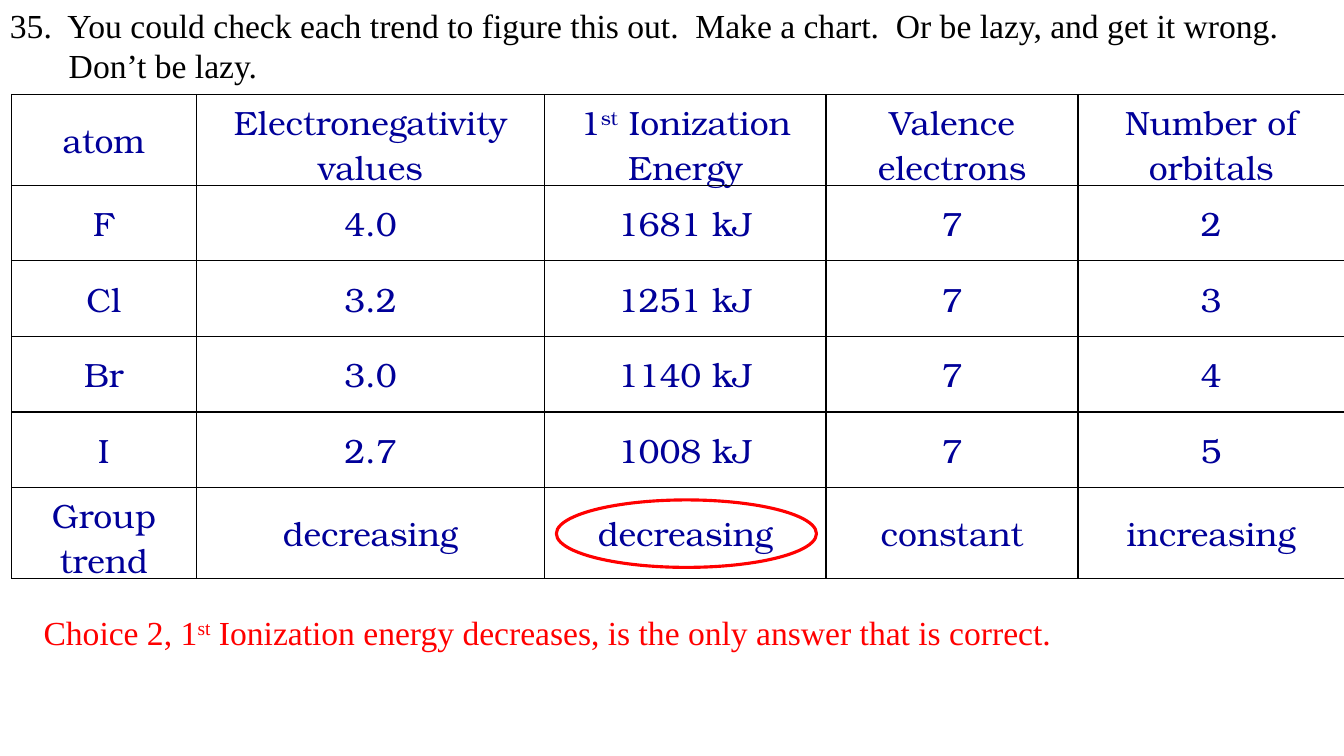
from pptx import Presentation
from pptx.dml.color import RGBColor
from pptx.enum.shapes import MSO_SHAPE
from pptx.enum.text import MSO_ANCHOR, PP_ALIGN
from pptx.util import Pt
from lxml.etree import SubElement
from pptx.oxml.ns import qn

COLOURS = {"black": "000000", "blue": "000099", "red": "FF0000"}
COLUMN_WIDTHS = [131.8, 249.1, 200.9, 180, 190.1]
ROW_HEIGHTS = [54.7, 54, 54, 54, 54, 54.7]
TREND_ROWS = [
    ["atom", "Electronegativity values", "1^st^ Ionization Energy",
     "Valence electrons", "Number of orbitals"],
    ["F", "4.0", "1681 kJ", "7", "2"],
    ["Cl", "3.2", "1251 kJ", "7", "3"],
    ["Br", "3.0", "1140 kJ", "7", "4"],
    ["I", "2.7", "1008 kJ", "7", "5"],
    ["Group\ntrend", "decreasing", "decreasing", "constant", "increasing"],
]


def write(para, text, font="Times New Roman", size=24, colour="black",
          align=PP_ALIGN.LEFT, before=0, left=0, first=0):
    """Fill a paragraph; text between ^ marks is superscript."""
    para.alignment = align
    para.space_before = Pt(before)
    properties = para._p.get_or_add_pPr()
    properties.set("marL", str(Pt(left)))
    properties.set("indent", str(Pt(first)))
    for index, piece in enumerate(text.split("^")):
        for line_number, line in enumerate(piece.split("\n")):
            if line_number:
                para.add_line_break()
            span = para.add_run()
            span.text = line
            span.font.name = font
            span.font.size = Pt(size)
            span.font.color.rgb = RGBColor.from_string(COLOURS[colour])
            if index % 2:
                span._r.get_or_add_rPr().set("baseline", "30000")


def add_border(cell, colour="black", width=1):
    properties = cell._tc.get_or_add_tcPr()
    for position, side in enumerate(("a:lnL", "a:lnR", "a:lnT", "a:lnB")):
        line = SubElement(properties, qn(side), w=str(Pt(width)))
        properties.insert(position, line)
        fill = SubElement(line, qn("a:solidFill"))
        SubElement(fill, qn("a:srgbClr"), val=COLOURS[colour])


def add_question(page):
    box = page.shapes.add_textbox(Pt(0), Pt(0), Pt(960), Pt(472))
    frame = box.text_frame
    frame.word_wrap = True
    write(frame.paragraphs[0],
          "35.  You could check each trend to figure this out.  Make a chart.  "
          "Or be lazy, and get it wrong.\nDon’t be lazy.", left=42, first=-42)
    write(frame.add_paragraph(),
          "Choice 2, 1^st^ Ionization energy decreases, "
          "is the only answer that is correct.",
          colour="red", before=376, left=24)


def add_trend_table(page):
    table = page.shapes.add_table(
        len(ROW_HEIGHTS), len(COLUMN_WIDTHS),
        Pt(8.3), Pt(67.5), Pt(951.9), Pt(346)).table
    table.first_row = table.horz_banding = False
    for column, width in zip(table.columns, COLUMN_WIDTHS):
        column.width = Pt(width)
    for row, height, texts in zip(table.rows, ROW_HEIGHTS, TREND_ROWS):
        row.height = Pt(height)
        for cell, text in zip(row.cells, texts):
            cell.fill.background()
            cell.vertical_anchor = MSO_ANCHOR.MIDDLE
            add_border(cell)
            write(cell.text_frame.paragraphs[0], text, font="TeX Gyre Bonum",
                  colour="blue", align=PP_ALIGN.CENTER)


def add_ring(page, left, top, width, height, colour="red"):
    ring = page.shapes.add_shape(
        MSO_SHAPE.OVAL, Pt(left), Pt(top), Pt(width), Pt(height))
    ring.shadow.inherit = False
    ring.fill.background()
    ring.line.color.rgb = RGBColor.from_string(COLOURS[colour])
    ring.line.width = Pt(2.25)


def main():
    deck = Presentation()
    deck.slide_width, deck.slide_height = Pt(960), Pt(540)
    page = deck.slides.add_slide(deck.slide_layouts[6])
    add_question(page)
    add_trend_table(page)
    # Ring around the answer
    add_ring(page, 397.4, 357.1, 185.8, 48.2)
    deck.save("out.pptx")


if __name__ == "__main__":
    main()
